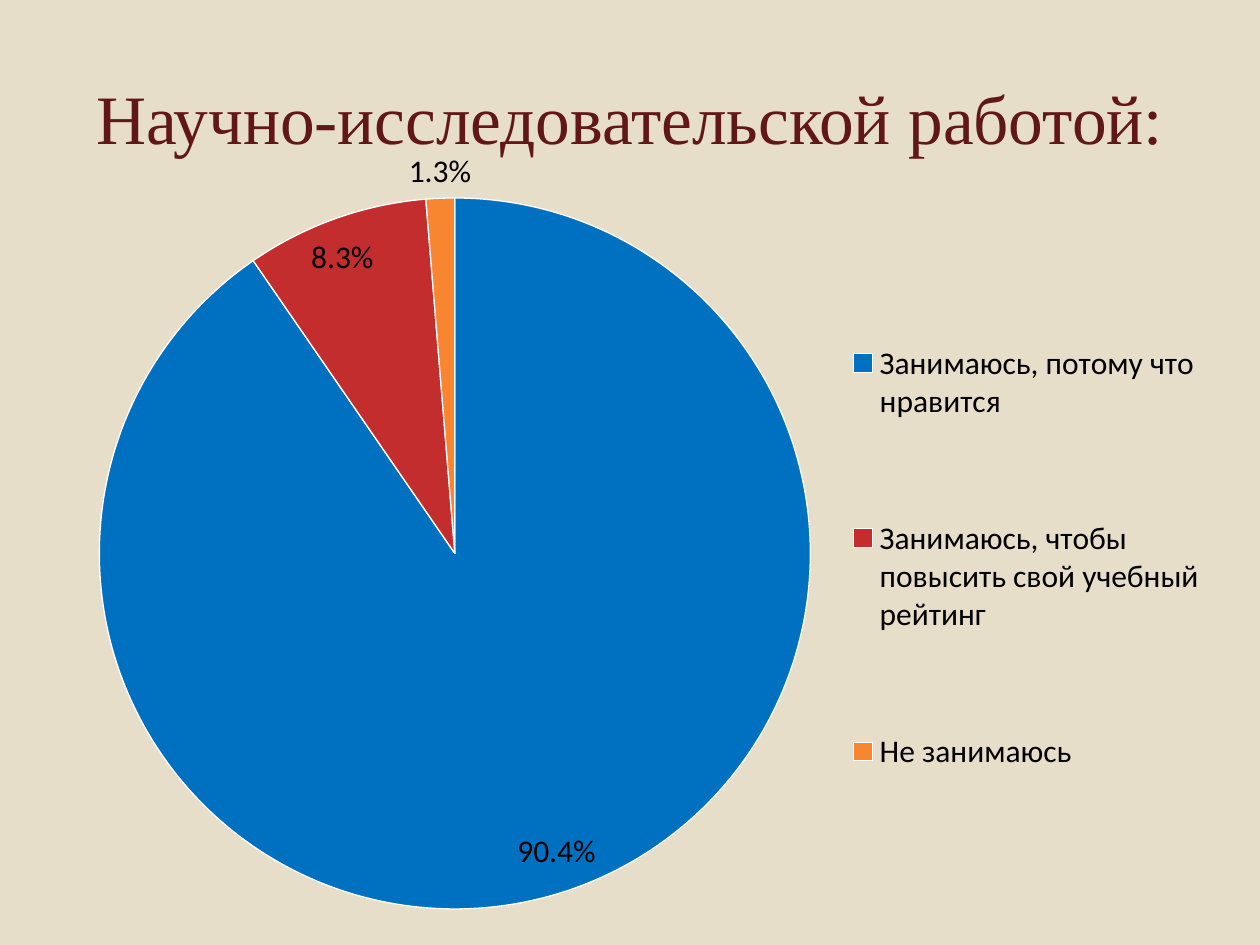
from lxml import etree
from pptx import Presentation
from pptx import util as u
from pptx.chart.data import CategoryChartData
from pptx.dml.color import RGBColor
from pptx.enum import chart as ch, text
from pptx.oxml.ns import qn

ANSWERS = [
    ("Занимаюсь, потому что нравится", 90.4, "0070C0"),
    ("Занимаюсь, чтобы повысить свой учебный рейтинг", 8.3, "C32D2E"),
    ("Не занимаюсь", 1.3, "F88631"),
]


def paint(color_format, color):
    color_format.rgb = RGBColor.from_string(color)


def fill_solid(fill, color):
    fill.solid()
    paint(fill.fore_color, color)


def make_layout(x, y, w, h, inner=False):
    """Manual chart layout, in fractions of the chart box."""
    layout = etree.Element(qn("c:layout"))
    manual = etree.SubElement(layout, qn("c:manualLayout"))
    settings = [("layoutTarget", "inner")] if inner else []
    settings += [("xMode", "edge"), ("yMode", "edge"),
                 ("x", x), ("y", y), ("w", w), ("h", h)]
    for tag, value in settings:
        etree.SubElement(manual, qn(f"c:{tag}")).set("val", str(value))
    return layout


def place_title(slide, box):
    title = slide.shapes.title
    title.left, title.top, title.width, title.height = box
    frame = title.text_frame
    frame.text = "Научно-исследовательской работой:"
    frame.word_wrap = True
    frame.vertical_anchor = text.MSO_ANCHOR.MIDDLE
    heading = frame.paragraphs[0]
    heading.alignment = text.PP_ALIGN.CENTER
    heading.font.name = "Times New Roman"
    heading.font.size = u.Pt(39.6)
    paint(heading.font.color, "621717")


def place_pie(slide, box):
    data = CategoryChartData()
    data.categories = [answer for answer, _, _ in ANSWERS]
    data.add_series("Series 1", [share for _, share, _ in ANSWERS])
    pie = slide.shapes.add_chart(ch.XL_CHART_TYPE.PIE, *box, data).chart
    pie.has_title = False
    pie.font.name = "Calibri"
    pie.font.size = u.Pt(18)
    paint(pie.font.color, "000000")

    # Slices
    plot = pie.plots[0]
    plot.vary_by_categories = True
    for index, (_, _, color) in enumerate(ANSWERS):
        slice_format = plot.series[0].points[index].format
        fill_solid(slice_format.fill, color)
        paint(slice_format.line.color, "FFFFFF")
        slice_format.line.width = u.Pt(0.75)

    # Percentages
    plot.has_data_labels = True
    labels = plot.data_labels
    labels.show_value = False
    labels.show_percentage = True
    labels.number_format = "0.0%"
    labels.number_format_is_linked = False
    labels.position = ch.XL_LABEL_POSITION.BEST_FIT

    # Legend
    pie.has_legend = True
    legend = pie.legend
    legend.position = ch.XL_LEGEND_POSITION.RIGHT
    legend.include_in_layout = False

    # Positions of the pie and the legend
    plot_area = plot._element.getparent()
    for old in plot_area.findall(qn("c:layout")):
        plot_area.remove(old)
    plot_area.insert(0, make_layout(0.04, 0.08, 0.61, 0.9, inner=True))
    for old in legend._element.findall(qn("c:layout")):
        legend._element.remove(old)
    legend._element.find(qn("c:legendPos")).addnext(
        make_layout(0.67, 0.14, 0.31, 0.79))


def main():
    deck = Presentation()
    deck.slide_width, deck.slide_height = u.Inches(10), u.Inches(7.5)
    slide = deck.slides.add_slide(deck.slide_layouts[5])
    fill_solid(slide.background.fill, "E7DEC9")
    place_title(slide, [u.Inches(n) for n in (0.5, 0.3, 9, 1.25)])
    place_pie(slide, [u.Inches(n) for n in (0.35, 1.07, 9.45, 6.27)])
    deck.save("out.pptx")


if __name__ == "__main__":
    main()
